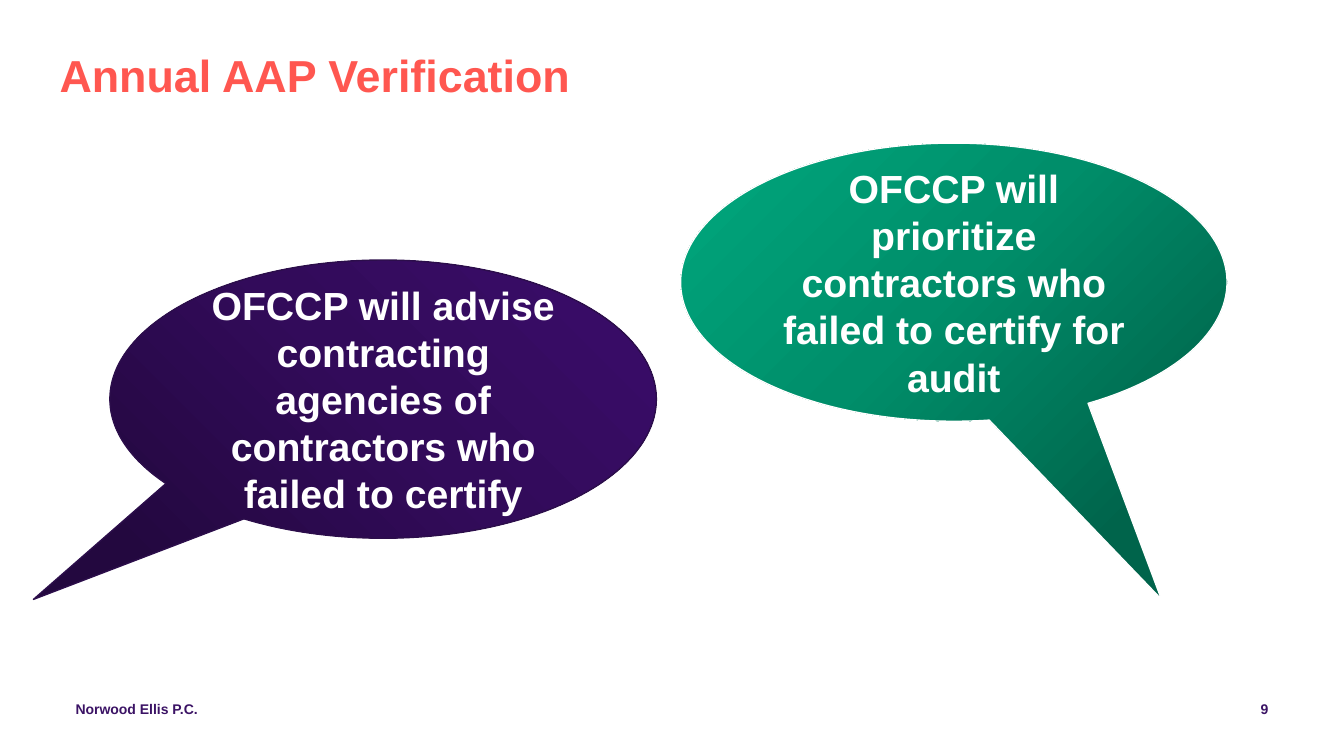
import copy

import pptx
import pptx.dml.color
import pptx.enum.shapes
import pptx.enum.text
import pptx.oxml.ns
import pptx.util

Inches = pptx.util.Inches
RGBColor = pptx.dml.color.RGBColor
ALIGN = pptx.enum.text.PP_ALIGN

FONT = "Arial"
CORAL = RGBColor(0xFF, 0x57, 0x50)
PURPLE = RGBColor(0x3B, 0x13, 0x65)
PURPLE_EDGE = RGBColor(0x2C, 0x0E, 0x4B)
WHITE = RGBColor(0xFF, 0xFF, 0xFF)
PURPLE_SHADES = (
    RGBColor(0x23, 0x08, 0x3F),
    RGBColor(0x32, 0x0B, 0x5A),
    RGBColor(0x3B, 0x0D, 0x6B),
)
GREEN_SHADES = (
    RGBColor(0x00, 0x64, 0x4B),
    RGBColor(0x00, 0x8E, 0x6A),
    RGBColor(0x00, 0xA8, 0x7E),
)


def write(frame, text, size, color, align):
    frame.word_wrap = True
    frame.auto_size = pptx.enum.text.MSO_AUTO_SIZE.NONE
    frame.text = text
    paragraph = frame.paragraphs[0]
    paragraph.alignment = align
    paragraph.font.name = FONT
    paragraph.font.size = pptx.util.Pt(size)
    paragraph.font.bold = True
    paragraph.font.color.rgb = color


def clear_margins(frame):
    frame.margin_left = frame.margin_right = 0
    frame.margin_top = frame.margin_bottom = 0


def set_title(slide, text):
    title = slide.shapes.title
    title.left, title.top = Inches(0.59), Inches(0.37)
    title.width, title.height = Inches(11.83), Inches(0.81)
    frame = title.text_frame
    write(frame, text, 32, CORAL, ALIGN.LEFT)
    clear_margins(frame)
    frame.vertical_anchor = pptx.enum.text.MSO_ANCHOR.MIDDLE
    frame.paragraphs[0].line_spacing = 0.9


def add_footer(slide, text, left, width, align):
    footer = slide.shapes.add_textbox(
        Inches(left), Inches(6.95), Inches(width), Inches(0.4))
    write(footer.text_frame, text, 10, PURPLE, align)
    clear_margins(footer.text_frame)


def fill_gradient(shape, shades, angle):
    """Spread three shades evenly along a counter-clockwise angle."""
    shape.fill.gradient()
    shape.fill.gradient_angle = angle
    stop_list = next(shape._element.spPr.iter(pptx.oxml.ns.qn("a:gsLst")))
    stop_list.append(copy.deepcopy(stop_list[-1]))
    for index, (stop, shade) in enumerate(zip(shape.fill.gradient_stops, shades)):
        stop.position = index / 2
        stop.color.rgb = shade


def add_callout(slide, text, left, top, tip, shades, angle, edge):
    callout = slide.shapes.add_shape(
        pptx.enum.shapes.MSO_SHAPE.OVAL_CALLOUT,
        Inches(left), Inches(top), Inches(5.42), Inches(2.76))
    callout.shadow.inherit = False
    callout.adjustments[0], callout.adjustments[1] = tip
    fill_gradient(callout, shades, angle)
    callout.line.color.rgb = edge
    callout.line.width = pptx.util.Pt(1)
    write(callout.text_frame, text, 28, WHITE, ALIGN.CENTER)
    callout.text_frame.vertical_anchor = pptx.enum.text.MSO_ANCHOR.MIDDLE


def main():
    deck = pptx.Presentation()
    deck.slide_width, deck.slide_height = Inches(13.33), Inches(7.5)
    slide = deck.slides.add_slide(deck.slide_layouts.get_by_name("Title Only"))
    set_title(slide, "Annual AAP Verification")
    add_callout(
        slide,
        "OFCCP will advise contracting agencies of contractors who failed to certify",
        1.09, 2.58, (-0.64, 0.72), PURPLE_SHADES, 45, PURPLE_EDGE)
    add_callout(
        slide,
        "OFCCP will prioritize contractors who failed to certify for audit",
        6.75, 1.42, (0.38, 1.14), GREEN_SHADES, 135, WHITE)
    add_footer(slide, "Norwood Ellis P.C.", 0.75, 4.5, ALIGN.LEFT)
    add_footer(slide, "9", 9.58, 3, ALIGN.RIGHT)
    deck.save("out.pptx")


if __name__ == "__main__":
    main()
